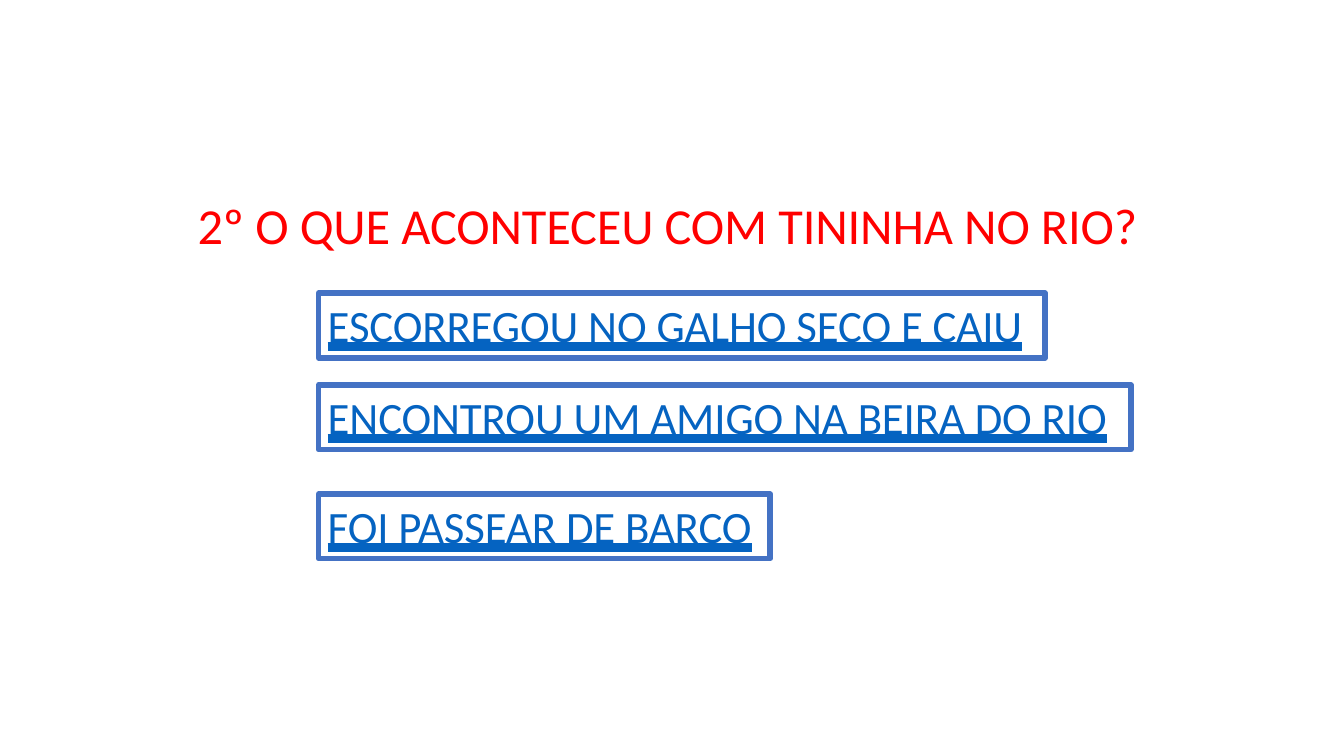
import pptx
import pptx.dml.color
import pptx.enum.shapes
import pptx.enum.text
import pptx.util

Cm, Pt = pptx.util.Cm, pptx.util.Pt


def color(hex_value):
    return pptx.dml.color.RGBColor.from_string(hex_value)


def write_line(box, text, hex_value, margins, font_format):
    """Put one left-aligned, slightly tightened line of text in the box."""
    frame = box.text_frame
    frame_format = {
        "word_wrap": True,
        "vertical_anchor": pptx.enum.text.MSO_ANCHOR.TOP,
        "margin_right": 0,
        "margin_bottom": 0,
        **margins,
    }
    for name, value in frame_format.items():
        setattr(frame, name, value)
    para = frame.paragraphs[0]
    para.alignment = pptx.enum.text.PP_ALIGN.LEFT
    span = para.add_run()
    span.text = text
    for name, value in {"name": "Calibri", **font_format}.items():
        setattr(span.font, name, value)
    span.font.color.rgb = color(hex_value)
    span._r.get_or_add_rPr().set("spc", "-10")


deck = pptx.Presentation()
deck.slide_width, deck.slide_height = Cm(33.87), Cm(19.05)
page = deck.slides.add_slide(deck.slide_layouts[6])

question = page.shapes.add_textbox(Cm(4.95), Cm(4.83), Cm(23.9), Cm(1.6))
write_line(
    question,
    "2º O QUE ACONTECEU COM TININHA NO RIO?",
    "FF0000",
    {"margin_left": Cm(0.03), "margin_top": Cm(0.06)},
    {"size": Pt(36)},
)

answers = [
    ("ESCORREGOU NO GALHO SECO E CAIU", 7.39, 18.31),
    ("ENCONTROU UM AMIGO NA BEIRA DO RIO", 9.7, 20.47),
    ("FOI PASSEAR DE BARCO", 12.45, 11.38),
]
for text, top, width in answers:
    answer = page.shapes.add_shape(
        pptx.enum.shapes.MSO_SHAPE.RECTANGLE, Cm(8.03), Cm(top), Cm(width), Cm(1.63)
    )
    answer.shadow.inherit = False
    answer.fill.background()
    answer.line.color.rgb = color("4472C4")
    answer.line.width = Pt(4)
    write_line(
        answer,
        text,
        "0563C1",
        {"margin_left": Cm(0.23), "margin_top": Cm(0.11)},
        {"size": Pt(32), "underline": pptx.enum.text.MSO_UNDERLINE.HEAVY_LINE},
    )

deck.save("out.pptx")
